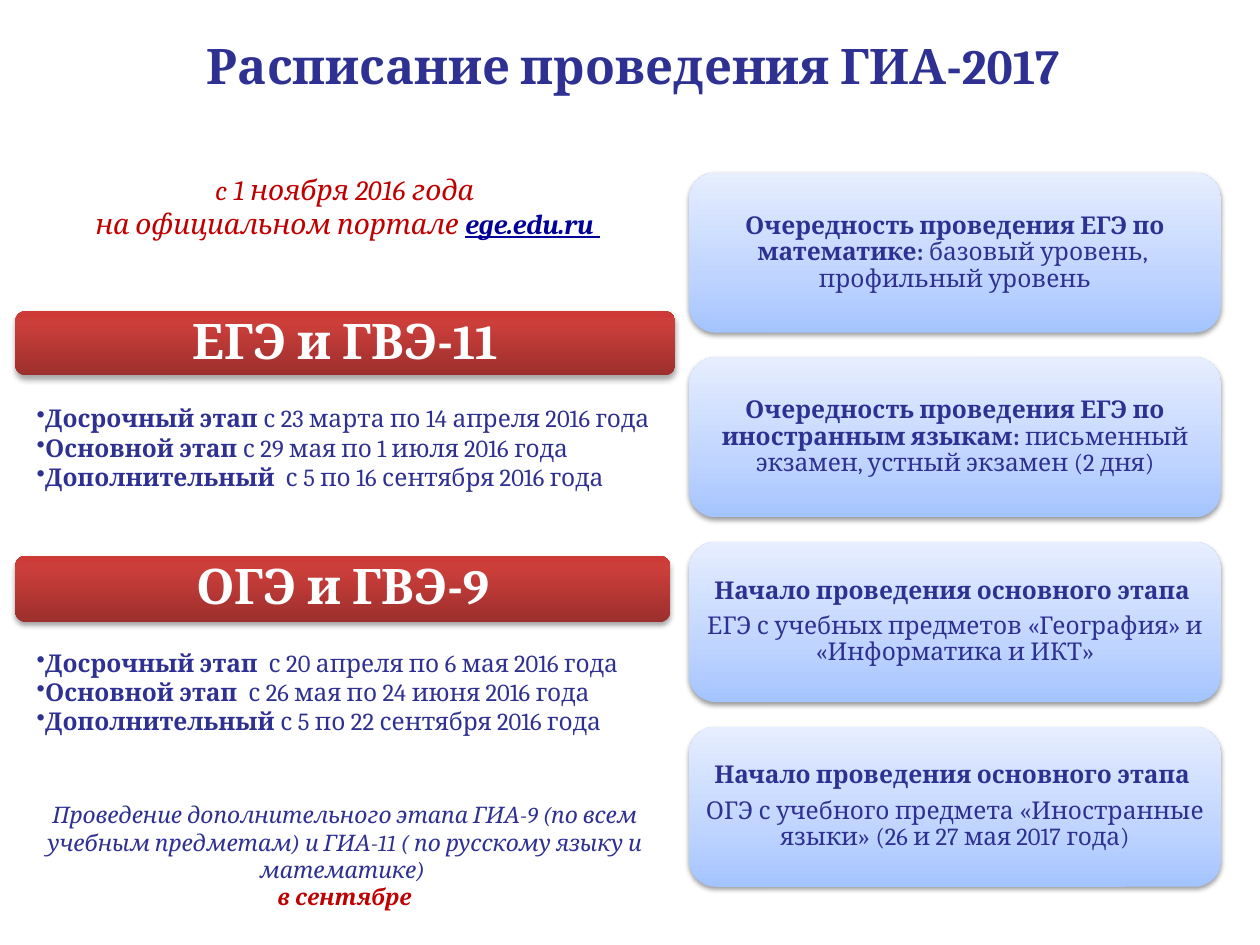
from lxml import etree
from pptx import Presentation
from pptx.dml.color import RGBColor
from pptx.enum.shapes import MSO_SHAPE
from pptx.enum.text import MSO_ANCHOR, PP_ALIGN
from pptx.oxml.ns import qn
from pptx.util import Inches, Pt

ROUNDED = MSO_SHAPE.ROUNDED_RECTANGLE
CENTER, LEFT = PP_ALIGN.CENTER, PP_ALIGN.LEFT
TOP, MIDDLE = MSO_ANCHOR.TOP, MSO_ANCHOR.MIDDLE
FONT = "Cambria"
NAVY, RED, WHITE, LINK = "2E3192", "C00000", "FFFFFF", "000099"
BLUE_STOPS = [(0, "A4C4FF"), (35, "BFD4FF"), (100, "E6EEFF")]
RED_STOPS = [(0, "9C2F2D"), (80, "CB3E3A"), (100, "CE3B37")]

CARDS = [
    [[("Очередность проведения ЕГЭ по математике: ", True),
      ("базовый уровень,  профильный уровень", False)]],
    [[("Очередность проведения ЕГЭ по иностранным языкам: ", True),
      ("письменный экзамен, устный экзамен (2 дня)", False)]],
    [[("Начало проведения основного этапа ", True)],
     [("ЕГЭ с учебных предметов «География» и «Информатика и ИКТ»", False)]],
    [[("Начало проведения основного этапа ", True)],
     [("ОГЭ с учебного предмета «Иностранные языки» (26 и 27 мая 2017 года)", False)]],
]
STAGES = [
    ("ЕГЭ и ГВЭ-11", 2.47, 5.24, 0.51, 3.18, 0.8, [
        [("Досрочный этап ", True), ("с 23 марта по 14 апреля 2016 года", False)],
        [("Основной этап ", True), ("с 29 мая по 1 июля 2016 года", False)],
        [("Дополнительный", True), ("  с 5 по 16 сентября 2016 года", False)],
    ]),
    ("ОГЭ и ГВЭ-9", 4.41, 5.2, 0.53, 5.12, 0.66, [
        [("Досрочный этап  ", True), ("с 20 апреля по 6 мая 2016 года", False)],
        [("Основной этап  ", True), ("с 26 мая по 24 июня 2016 года", False)],
        [("Дополнительный ", True), ("с 5 по 22 сентября 2016 года", False)],
    ]),
]


def rgb(color):
    return RGBColor.from_string(color)


def set_margins(frame, left, top, right, bottom):
    frame.margin_left, frame.margin_top = Inches(left), Inches(top)
    frame.margin_right, frame.margin_bottom = Inches(right), Inches(bottom)


def write_text(frame, lines, size, color, align=LEFT, anchor=TOP, italic=False):
    frame.word_wrap = True
    frame.vertical_anchor = anchor
    for index, pieces in enumerate(lines):
        paragraph = frame.paragraphs[0] if index == 0 else frame.add_paragraph()
        paragraph.alignment = align
        font = paragraph.font
        font.name, font.size, font.italic = FONT, Pt(size), italic
        font.color.rgb = rgb(color)
        for text, bold in pieces:
            run = paragraph.add_run()
            run.text = text
            run.font.bold = bold


def add_text(slide, left, top, width, height, lines, size, color, **style):
    box = slide.shapes.add_textbox(Inches(left), Inches(top), Inches(width), Inches(height))
    write_text(box.text_frame, lines, size, color, **style)
    return box.text_frame


def add_color(parent, color):
    return etree.SubElement(parent, qn("a:srgbClr"), val=color)


def set_gradient(shape, stops):
    shape.fill.gradient()
    shape.fill.gradient_angle = 90
    stop_list = shape.element.spPr.find(".//" + qn("a:gsLst"))
    for stop in list(stop_list):
        stop_list.remove(stop)
    for position, color in stops:
        stop = etree.SubElement(stop_list, qn("a:gs"), pos=str(position * 1000))
        add_color(stop, color)


def set_shadow(shape, opacity, distance):
    shape.shadow.inherit = False
    effects = shape.element.spPr.find(qn("a:effectLst"))
    shadow = etree.SubElement(effects, qn("a:outerShdw"), blurRad=str(Pt(3.1)),
                              dist=str(Pt(distance)), dir="5400000", rotWithShape="0")
    etree.SubElement(add_color(shadow, "000000"), qn("a:alpha"), val=str(opacity * 1000))


def add_panel(slide, left, top, width, height, lines, size, color, stops, margin, shadow):
    shape = slide.shapes.add_shape(ROUNDED, Inches(left), Inches(top), Inches(width), Inches(height))
    set_gradient(shape, stops)
    shape.line.fill.background()
    set_shadow(shape, *shadow)
    set_margins(shape.text_frame, margin, margin, margin, margin)
    write_text(shape.text_frame, lines, size, color, align=CENTER, anchor=MIDDLE)
    for paragraph in shape.text_frame.paragraphs:
        paragraph.line_spacing = 0.9
        paragraph.space_after = Pt(round(size * 0.35))


def add_bullet_list(slide, left, top, width, height, lines):
    frame = add_text(slide, left, top, width, height, lines, 14, NAVY)
    set_margins(frame, 0.17, 0.02, 0.11, 0.02)
    for paragraph in frame.paragraphs:
        properties = paragraph._p.get_or_add_pPr()
        properties.set("marL", str(Inches(0.06)))
        properties.set("indent", str(-Inches(0.06)))
        bullet = etree.Element(qn("a:buChar"), char="•")
        properties.insert(0, bullet)
        properties.remove(bullet)
        properties.find(qn("a:defRPr")).addprevious(bullet)


def add_note(slide):
    frame = add_text(slide, 0, 6.31, 5.47, 0.76, [
        [("Проведение дополнительного этапа ГИА-9 (по всем учебным предметам) "
          "и ГИА-11 ( по русскому языку и математике) ", False)],
        [("в сентябре", True)],
    ], 13, NAVY, align=CENTER, italic=True)
    frame.paragraphs[1].font.color.rgb = rgb(RED)


def add_portal(slide):
    frame = add_text(slide, 0.28, 1.32, 4.96, 0.64, [
        [("c 1 ноября 2016 года ", False)],
        [("на официальном портале ", False), ("ege.edu.ru ", True)],
    ], 16, RED, align=CENTER, italic=True)
    address = frame.paragraphs[1].runs[1].font
    address.color.rgb = rgb(LINK)
    address.underline = True


def main():
    presentation = Presentation()
    presentation.slide_width, presentation.slide_height = Inches(10), Inches(7.5)
    slide = presentation.slides.add_slide(presentation.slide_layouts[6])
    add_text(slide, 1.54, 0.23, 8.15, 0.57, [[("Расписание проведения ГИА-2017", True)]], 28, NAVY)
    for index, lines in enumerate(CARDS):
        add_panel(slide, 5.47, 1.37 + index * 1.466, 4.22, 1.27, lines, 14, NAVY,
                  BLUE_STOPS, 0.06, (38, 1.6))
    for heading, top, width, height, list_top, list_height, lines in STAGES:
        add_panel(slide, 0.12, top, width, height, [[(heading, True)]], 28, WHITE,
                  RED_STOPS, 0.12, (35, 1.8))
        add_bullet_list(slide, 0.12, list_top, width, list_height, lines)
    add_note(slide)
    add_portal(slide)
    presentation.save("out.pptx")


if __name__ == "__main__":
    main()
